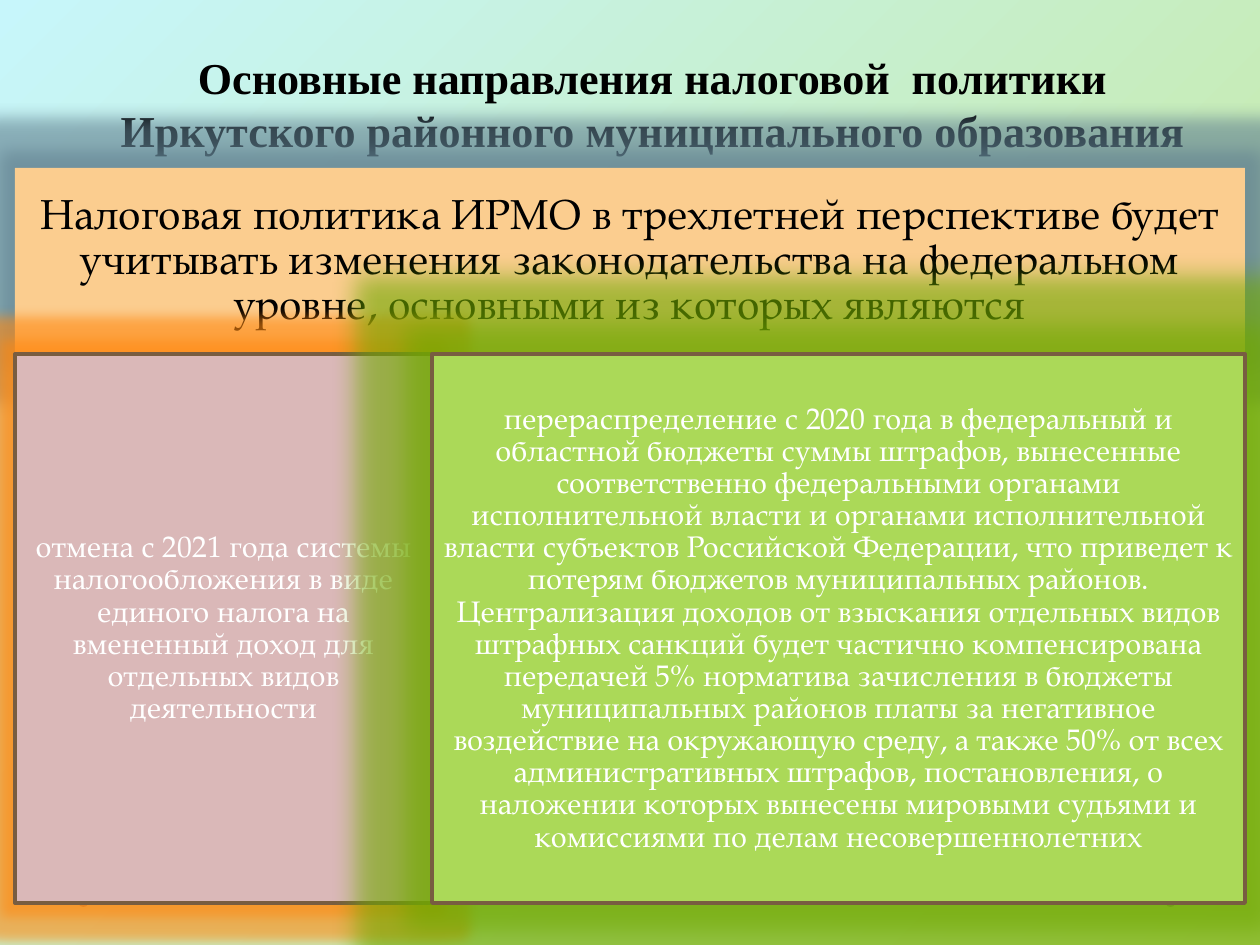
from lxml import etree
from pptx import Presentation
from pptx.dml.color import RGBColor
from pptx.enum.shapes import MSO_SHAPE as Shape
from pptx.enum.text import MSO_ANCHOR as Anchor, PP_ALIGN as Align
from pptx.oxml.ns import qn
from pptx.util import Pt

SCALE = 914400 / 126
BLACK = RGBColor(0x00, 0x00, 0x00)
WHITE = RGBColor(0xFF, 0xFF, 0xFF)
GREY = RGBColor(0x80, 0x80, 0x80)
SKY = RGBColor(0xC7, 0xF6, 0xFB)
MEADOW = RGBColor(0xC7, 0xE6, 0x8F)
PEACH = RGBColor(0xFB, 0xCD, 0x8F)
PINK = RGBColor(0xDA, 0xB8, 0xB8)
LIME = RGBColor(0xAB, 0xD9, 0x58)
BROWN = RGBColor(0x78, 0x5D, 0x41)
SLATE_GLOW = RGBColor(0x60, 0x80, 0x90)
ORANGE_GLOW = RGBColor(0xFF, 0x88, 0x10)
GREEN_GLOW = RGBColor(0x70, 0xA8, 0x00)

TITLE = "Основные направления налоговой  политики Иркутского районного муниципального образования"
HEADING = (
    "Налоговая политика ИРМО в трехлетней перспективе будет учитывать изменения "
    "законодательства на федеральном уровне, основными из которых являются"
)
TAX_CHANGE = (
    "отмена с 2021 года системы налогообложения в виде единого налога на "
    "вмененный доход для отдельных видов деятельности"
)
FINES_CHANGE = (
    "перераспределение с 2020 года в федеральный и областной бюджеты суммы штрафов, "
    "вынесенные соответственно федеральными органами исполнительной власти и органами "
    "исполнительной власти субъектов Российской Федерации, что приведет к потерям "
    "бюджетов муниципальных районов. Централизация доходов от взыскания отдельных видов "
    "штрафных санкций будет частично компенсирована передачей 5% норматива зачисления в "
    "бюджеты муниципальных районов платы за негативное воздействие на окружающую среду, "
    "а также 50% от всех административных штрафов, постановления, о наложении которых "
    "вынесены мировыми судьями и комиссиями по делам несовершеннолетних"
)


def px(length):
    return round(length * SCALE)


def write(shape, text, *, size, color, font="TeX Gyre Pagella", bold=False,
          anchor=Anchor.MIDDLE, inset=9, spacing=0.9):
    frame = shape.text_frame
    frame.word_wrap = True
    frame.vertical_anchor = anchor
    frame.margin_left = frame.margin_right = px(inset)
    frame.margin_top = frame.margin_bottom = px(inset)
    para = frame.paragraphs[0]
    para.alignment = Align.CENTER
    para.line_spacing = spacing
    span = para.add_run()
    span.text = text
    span.font.name = font
    span.font.size = Pt(size)
    span.font.bold = bold
    span.font.color.rgb = color


def add_filled(page, kind, box, fill, line=None):
    shape = page.shapes.add_shape(kind, *map(px, box))
    shape.shadow.inherit = False
    shape.fill.solid()
    shape.fill.fore_color.rgb = fill
    if line is None:
        shape.line.fill.background()
    else:
        shape.line.color.rgb = line
        shape.line.width = Pt(2.25)
    return shape


def add_glow(shape, color, radius):
    effects = shape._element.spPr.find(qn("a:effectLst"))
    glow = etree.SubElement(effects, qn("a:glow"), rad=str(px(radius)))
    tint = etree.SubElement(glow, qn("a:srgbClr"), val=str(color))
    etree.SubElement(tint, qn("a:alpha"), val="60000")


def paint_background(page):
    fill = page.background.fill
    fill.gradient()
    fill.gradient_angle = 315
    for stop, color, position in zip(fill.gradient_stops, (SKY, MEADOW), (0, 1)):
        stop.color.rgb = color
        stop.position = position


def add_footer_dots(page, box):
    left, top, width, size = box
    for x in (left + width - size, left):
        add_filled(page, Shape.OVAL, (x, top, size, size), GREY)


def add_title(page, box):
    title = page.shapes.add_textbox(*map(px, box))
    write(title, TITLE, size=25.2, color=BLACK, font="Times New Roman", bold=True,
          anchor=Anchor.BOTTOM, inset=6, spacing=1.0)


def add_policy_block(page, box):
    left, top, width, height = box
    heading_height, tax_width = 186, 417

    # Heading across the whole block
    heading = add_filled(page, Shape.RECTANGLE, (left, top, width, heading_height), PEACH)
    add_glow(heading, SLATE_GLOW, 32)
    write(heading, HEADING, size=24, color=BLACK, inset=12)

    # Two changes side by side beneath it
    panels = (
        (0, tax_width, PINK, ORANGE_GLOW, 24, TAX_CHANGE),
        (tax_width, width - tax_width, LIME, GREEN_GLOW, 50, FINES_CHANGE),
    )
    for offset, panel_width, fill, glow, radius, text in panels:
        panel_box = (left + offset, top + heading_height, panel_width, height - heading_height)
        panel = add_filled(page, Shape.RECTANGLE, panel_box, fill, BROWN)
        add_glow(panel, glow, radius)
        write(panel, text, size=17, color=WHITE)


def main():
    deck = Presentation()
    deck.slide_width, deck.slide_height = px(1260), px(945)
    page = deck.slides.add_slide(deck.slide_layouts[6])
    paint_background(page)
    add_footer_dots(page, (78, 896, 1098, 11))
    add_title(page, (95, 26, 1115, 136))
    add_policy_block(page, (15, 168, 1230, 735))
    deck.save("out.pptx")


if __name__ == "__main__":
    main()
